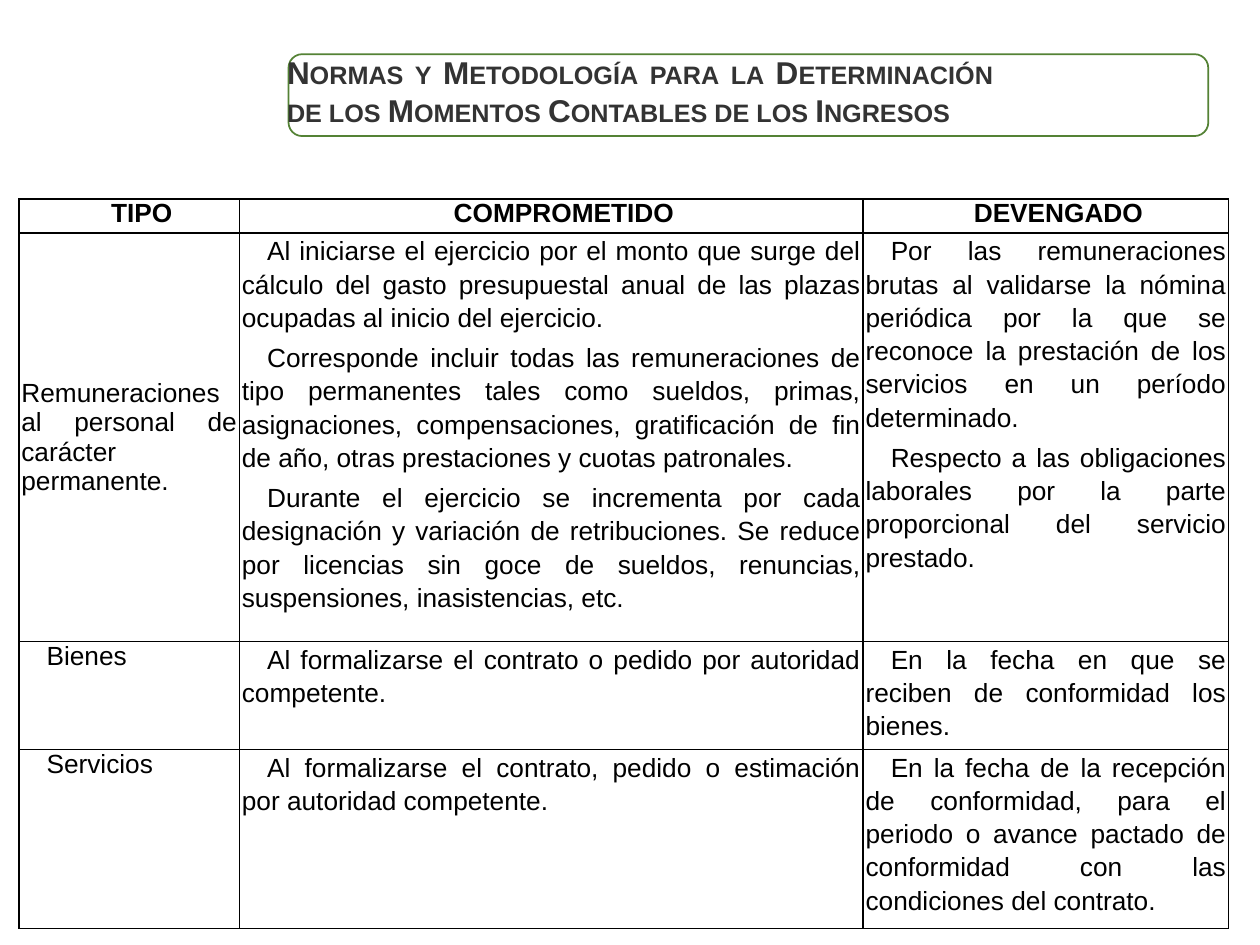
from pptx import Presentation
from pptx.dml.color import RGBColor
from pptx.enum.shapes import MSO_SHAPE
from pptx.enum.text import MSO_ANCHOR, PP_ALIGN
from pptx.oxml.xmlchemy import OxmlElement
from pptx.util import Inches, Pt

TITLE = ("Normas y Metodología para la Determinación de los Momentos "
         "Contables de los Ingresos")
HEADS = ["TIPO", "COMPROMETIDO", "DEVENGADO"]
# Each row: type, paragraphs of "comprometido", paragraphs of "devengado"
ROWS = [
    (["Remuneraciones al personal de carácter permanente."],
     ["Al iniciarse el ejercicio por el monto que surge del cálculo del gasto "
      "presupuestal anual de las plazas ocupadas al inicio del ejercicio.",
      "Corresponde incluir todas las remuneraciones de tipo permanentes tales "
      "como sueldos, primas, asignaciones, compensaciones, gratificación de "
      "fin de año, otras prestaciones y cuotas patronales.",
      "Durante el ejercicio se incrementa por cada designación y variación de "
      "retribuciones. Se reduce por licencias sin goce de sueldos, renuncias, "
      "suspensiones, inasistencias, etc."],
     ["Por las remuneraciones brutas al validarse la nómina periódica por la "
      "que se reconoce la prestación de los servicios en un período "
      "determinado.",
      "Respecto a las obligaciones laborales por la parte proporcional del "
      "servicio prestado."]),
    (["Bienes"],
     ["Al formalizarse el contrato o pedido por autoridad competente."],
     ["En la fecha en que se reciben de conformidad los bienes."]),
    (["Servicios"],
     ["Al formalizarse el contrato, pedido o estimación por autoridad "
      "competente."],
     ["En la fecha de la recepción de conformidad, para el periodo o avance "
      "pactado de conformidad con las condiciones del contrato."]),
]

BLACK = RGBColor(0x00, 0x00, 0x00)
GRAY = RGBColor(0x33, 0x33, 0x33)
GREEN = RGBColor(0x54, 0x82, 0x35)

WIDTHS = [1.75, 4.95, 2.9]
HEIGHTS = [0.27, 3.08, 0.8, 1.34]
BODY = {"name": "Arial", "size": Pt(15), "bold": False}
HEAD = BODY | {"bold": True}
BANNER = {"name": "Arial", "size": Pt(18), "bold": True}
SPACE = {"space_before": Pt(2), "space_after": Pt(2)}
MARGINS = {"margin_left": Inches(0.02), "margin_right": Inches(0.02),
           "margin_top": 0, "margin_bottom": 0}


def assign(item, values):
    for key, value in values.items():
        setattr(item, key, value)


def write(para, text, font, color, align):
    para.alignment = align
    run = para.add_run()
    run.text = text
    assign(run.font, font)
    run.font.color.rgb = color
    return run


def border(cell):
    props = cell._tc.get_or_add_tcPr()
    for side in ("a:lnL", "a:lnR", "a:lnT", "a:lnB"):
        line = OxmlElement(side)
        line.set("w", str(Pt(1)))
        fill = OxmlElement("a:solidFill")
        tint = OxmlElement("a:srgbClr")
        tint.set("val", str(BLACK))
        fill.append(tint)
        line.append(fill)
        props.append(line)


def fill_cell(cell, texts, row, col):
    border(cell)
    cell.fill.background()
    assign(cell, MARGINS)
    head, lead = row == 0, (row, col) == (1, 0)
    cell.vertical_anchor = MSO_ANCHOR.MIDDLE if lead else MSO_ANCHOR.TOP
    frame = cell.text_frame
    for i, text in enumerate(texts):
        para = frame.add_paragraph() if i else frame.paragraphs[0]
        write(para, text, HEAD if head else BODY, BLACK,
              PP_ALIGN.CENTER if head else PP_ALIGN.JUSTIFY)
        assign(para, SPACE)
        if not head and col:
            para.line_spacing = 1.14
        if not lead:
            props = para._p.get_or_add_pPr()
            props.set("marL", "0")
            props.set("indent", str(Inches(0.2)))


def add_title(slide):
    frame = slide.shapes.add_shape(
        MSO_SHAPE.ROUNDED_RECTANGLE,
        *map(Inches, (2.29, 0.43, 7.3, 0.65)))
    frame.shadow.inherit = False
    frame.fill.background()
    frame.line.color.rgb = GREEN
    frame.line.width = Pt(1)
    box = slide.shapes.add_textbox(*map(Inches, (2.18, 0.37, 5.8, 0.71)))
    box.text_frame.word_wrap = True
    run = write(box.text_frame.paragraphs[0], TITLE, BANNER, GRAY,
                PP_ALIGN.JUSTIFY)
    run.font._element.set("cap", "small")


def add_grid(slide):
    rows = [[[head] for head in HEADS], *ROWS]
    table = slide.shapes.add_table(
        len(rows), len(HEADS), Inches(0.15), Inches(1.58),
        Inches(sum(WIDTHS)), Inches(sum(HEIGHTS))).table
    assign(table, {"first_row": False, "horz_banding": False})
    for column, width in zip(table.columns, WIDTHS):
        column.width = Inches(width)
    for r, (row, height) in enumerate(zip(rows, HEIGHTS)):
        table.rows[r].height = Inches(height)
        for c, texts in enumerate(row):
            fill_cell(table.cell(r, c), texts, r, c)


def main():
    deck = Presentation()
    deck.slide_width, deck.slide_height = Inches(10), Inches(7.5)
    slide = deck.slides.add_slide(deck.slide_layouts[6])
    add_title(slide)
    add_grid(slide)
    deck.save("out.pptx")


if __name__ == "__main__":
    main()
